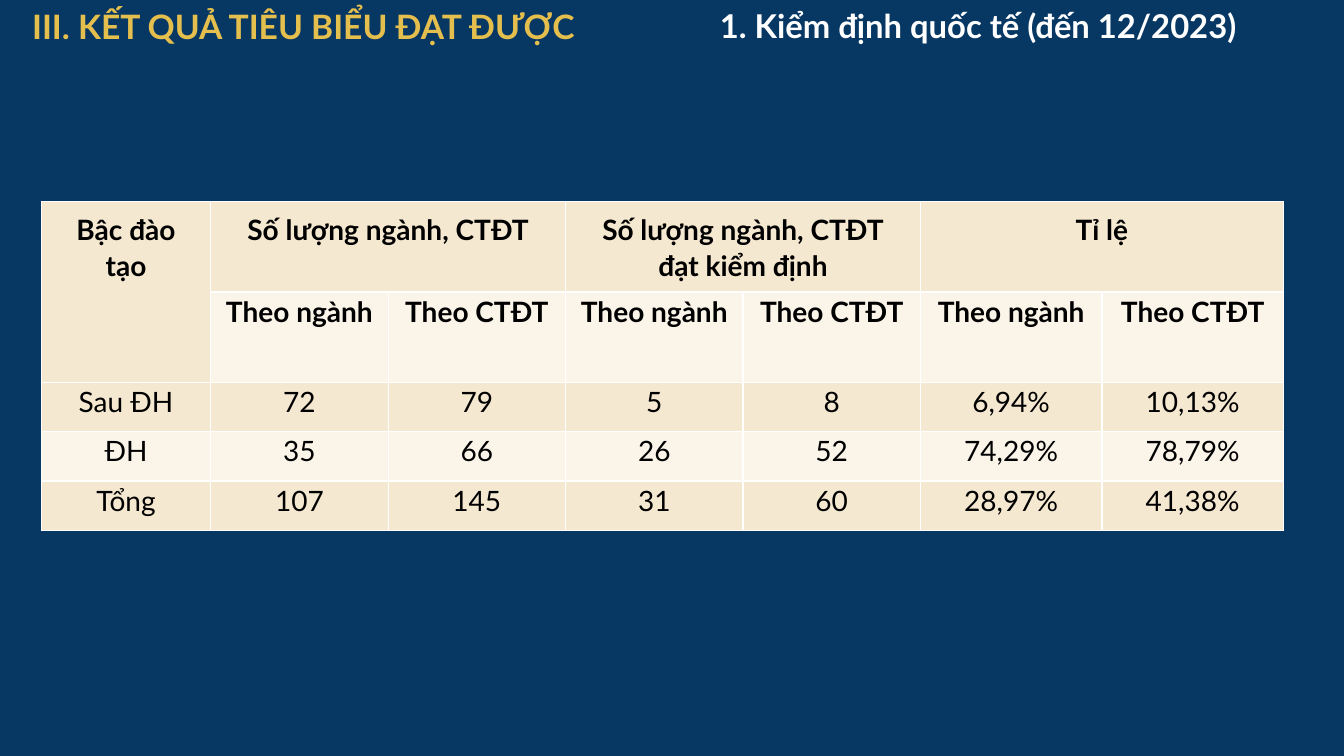
"""Build the slide on international accreditation results."""
from pptx import Presentation
from pptx import util as u
from pptx.dml.color import RGBColor
from pptx.enum import text
from pptx.oxml import parse_xml
from pptx.oxml.ns import nsdecls

TITLE = "1. Kiểm định quốc tế (đến 12/2023)"
SECTION = "III. KẾT QUẢ TIÊU BIỂU ĐẠT ĐƯỢC"
CORNER = "Bậc đào tạo"
GROUPS = ["Số lượng ngành, CTĐT", "Số lượng ngành, CTĐT\vđạt kiểm định", "Tỉ lệ"]
MEASURES = ["Theo ngành", "Theo CTĐT"]
RESULTS = [
    ("Sau ĐH", "72", "79", "5", "8", "6,94%", "10,13%"),
    ("ĐH", "35", "66", "26", "52", "74,29%", "78,79%"),
    ("Tổng", "107", "145", "31", "60", "28,97%", "41,38%"),
]

THEME = {
    "font": "Lato", "page": "073763", "white": "FFFFFF", "gold": "E5BF4D",
    "ink": "000000", "bands": ("F5E8D0", "FAF4E9"),
    "title": 23.4, "section": 24, "table": 20,
}
SLIDE = (13.33, 7.5)
TITLE_BOX = (7.04, 0, 6.08, 0.87)
SECTION_BOX = (0.22, 0, 8.76, 0.69)
TABLE_CORNER = (0.41, 2)
COLUMNS = [1.68] + [1.76] * 4 + [1.8] * 2
ROWS = [0.79] * 2 + [0.49] * 3
HEADING_FORMAT = {"line_spacing": 0.9, "space_before": u.Pt(16)}
CELL_FORMAT = {
    "alignment": text.PP_ALIGN.CENTER, "line_spacing": 1.07,
    "space_before": u.Pt(3), "space_after": u.Pt(3),
}


def apply(target, values):
    for name, value in values.items():
        setattr(target, name, value)


def margins(across, down):
    return {
        "margin_left": u.Inches(across), "margin_right": u.Inches(across),
        "margin_top": u.Inches(down), "margin_bottom": u.Inches(down),
    }


def write(frame, words, size, colour, bold, layout):
    frame.text = words
    for para in frame.paragraphs:
        apply(para, layout)
        for span in para.runs:
            apply(span.font, {"name": THEME["font"], "size": u.Pt(size), "bold": bold})
            span.font.color.rgb = RGBColor.from_string(colour)


def heading(box, place, words, size, colour):
    apply(box, dict(zip(("left", "top", "width", "height"), map(u.Inches, place))))
    frame = box.text_frame
    apply(frame, {
        "word_wrap": True, "auto_size": text.MSO_AUTO_SIZE.NONE,
        "vertical_anchor": text.MSO_ANCHOR.TOP, **margins(0.1, 0.1),
    })
    layout = {**HEADING_FORMAT, "alignment": text.PP_ALIGN.LEFT}
    write(frame, words, size, colour, True, layout)


def add_borders(cell):
    properties = cell._tc.get_or_add_tcPr()
    for position, side in enumerate(("lnL", "lnR", "lnT", "lnB")):
        properties.insert(position, parse_xml(
            f'<a:{side} {nsdecls("a")} w="{u.Pt(1)}"><a:solidFill>'
            f'<a:srgbClr val="{THEME["white"]}"/></a:solidFill></a:{side}>'))


def add_results(page):
    grid = [
        [CORNER] + [words for group in GROUPS for words in (group, "")],
        [""] + MEASURES * len(GROUPS),
        *RESULTS,
    ]
    sizes = (*TABLE_CORNER, sum(COLUMNS), sum(ROWS))
    table = page.shapes.add_table(
        len(ROWS), len(COLUMNS), *map(u.Inches, sizes)).table
    for column, width in zip(table.columns, COLUMNS):
        column.width = u.Inches(width)
    for row, height in zip(table.rows, ROWS):
        row.height = u.Inches(height)
    table.cell(0, 0).merge(table.cell(1, 0))
    for first in range(1, len(COLUMNS), len(MEASURES)):
        table.cell(0, first).merge(table.cell(0, first + len(MEASURES) - 1))
    for r, line in enumerate(grid):
        for c, words in enumerate(line):
            cell = table.cell(r, c)
            apply(cell, margins(0.18, 0.09) if r == 0 else margins(0.13, 0))
            cell.fill.solid()
            cell.fill.fore_color.rgb = RGBColor.from_string(THEME["bands"][r % 2])
            add_borders(cell)
            if words:
                write(cell.text_frame, words, THEME["table"], THEME["ink"],
                      r < 2, CELL_FORMAT)


def main():
    deck = Presentation()
    deck.slide_width, deck.slide_height = map(u.Inches, SLIDE)
    page = deck.slides.add_slide(deck.slide_layouts[5])
    page.background.fill.solid()
    page.background.fill.fore_color.rgb = RGBColor.from_string(THEME["page"])
    heading(page.shapes.title, TITLE_BOX, TITLE, THEME["title"], THEME["white"])
    section = page.shapes.add_textbox(*map(u.Inches, SECTION_BOX))
    heading(section, SECTION_BOX, SECTION, THEME["section"], THEME["gold"])
    add_results(page)
    deck.save("out.pptx")


if __name__ == "__main__":
    main()
